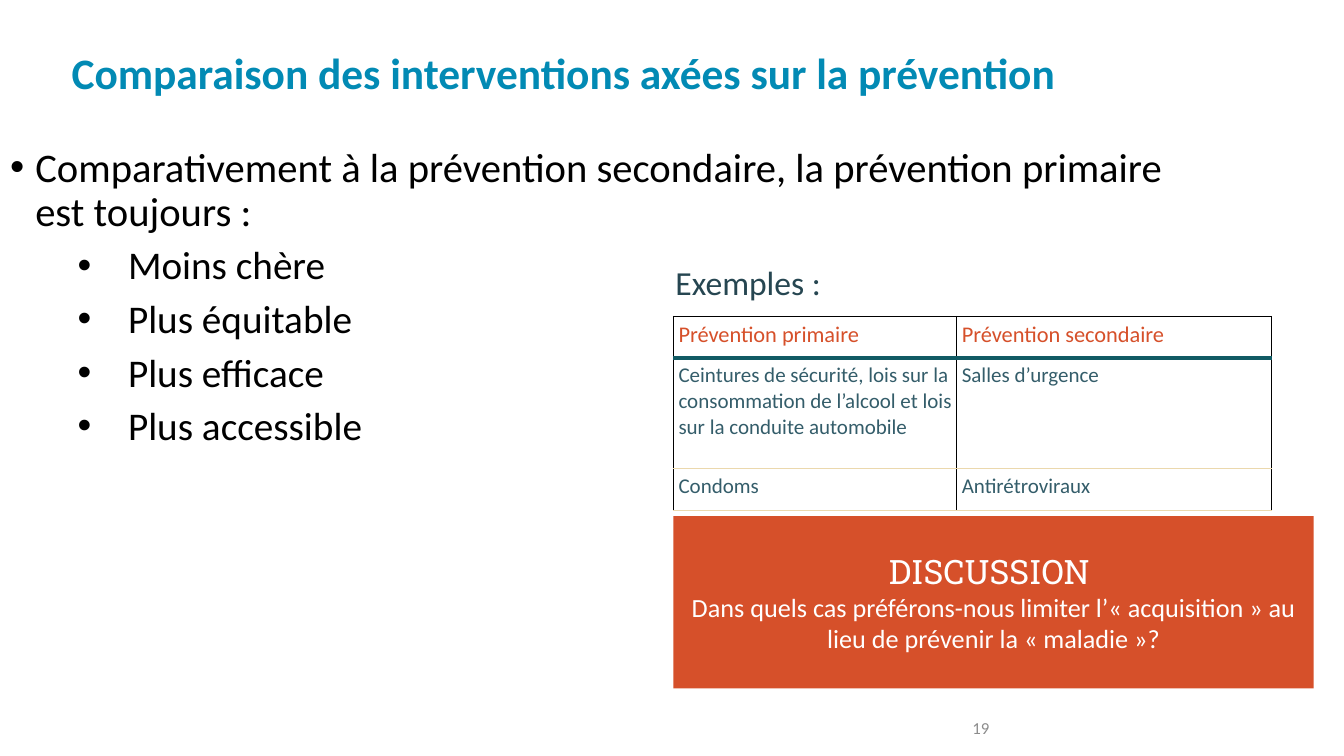
from lxml.etree import SubElement
from pptx import Presentation
from pptx.dml.color import RGBColor
from pptx.enum.shapes import MSO_SHAPE as Shape
from pptx.enum.text import MSO_ANCHOR as Anchor, MSO_AUTO_SIZE as AutoSize, PP_ALIGN as Align
from pptx.oxml.ns import qn
from pptx.util import Inches, Pt

ORANGE, TEAL, SAND, BLACK = "D6502A", "115B64", "EBD8AD", "000000"


def rgb(code):
    """Turn a hex string into a colour."""
    return RGBColor.from_string(code)


class Deck:
    """Style and current slide; boxes are in hundredths of its width and height."""

    font = "Calibri"

    def __init__(self):
        """Open a widescreen deck with one title-and-content slide."""
        self.show = Presentation()
        self.show.slide_width, self.show.slide_height = Inches(13.33), Inches(7.5)
        self.slide = self.show.slides.add_slide(self.show.slide_layouts[1])

    def across(self, columns):
        """Length of a number of grid columns."""
        return int(self.show.slide_width * columns / 100)

    def down(self, rows):
        """Length of a number of grid rows."""
        return int(self.show.slide_height * rows / 100)

    def box(self, left, top, width, height):
        """Position and size of a grid area."""
        return self.across(left), self.down(top), self.across(width), self.down(height)

    def style(self, paragraph, size, color, font=None, bold=False, align=Align.LEFT):
        """Format a paragraph and its runs."""
        paragraph.alignment = align
        for run in paragraph.runs:
            run.font.name, run.font.size, run.font.bold = font or self.font, Pt(size), bold
            run.font.color.rgb = rgb(color)

    def frame(self, holder, lines, inset_x=5, inset_y=5, anchor=Anchor.TOP):
        """Fill a shape's text frame with lines and return its paragraphs."""
        frame = holder.text_frame
        frame.text = "\n".join(lines)
        frame.word_wrap, frame.auto_size, frame.vertical_anchor = True, AutoSize.NONE, anchor
        frame.margin_left = frame.margin_right = Pt(inset_x)
        frame.margin_top = frame.margin_bottom = Pt(inset_y)
        return frame.paragraphs

    def place(self, holder, area):
        """Move a placeholder to a grid area."""
        holder.left, holder.top, holder.width, holder.height = self.box(*area)

    def title(self, text, area):
        """Write the slide title."""
        heading = self.slide.shapes.title
        self.place(heading, area)
        paragraph = self.frame(heading, [text], 0, 0)[0]
        paragraph.line_spacing = 0.9
        self.style(paragraph, 31, "028AB4", bold=True)

    def bullets(self, lead, points, area):
        """Write a lead bullet and the points below it."""
        body = self.slide.placeholders[1]
        self.place(body, area)
        for i, paragraph in enumerate(self.frame(body, [lead, *points], 7.2, 3.6)):
            level, size, margin, hang = (1, 28, 1.17, 0.5) if i else (0, 29, 0.25, 0.25)
            paragraph.level, paragraph.line_spacing = level, 0.9
            paragraph.space_before = Pt(8)
            self.style(paragraph, size, BLACK)
            props = paragraph._p.get_or_add_pPr()
            props.set("marL", str(Inches(margin)))
            props.set("indent", str(-Inches(hang)))
            SubElement(props, qn("a:buFont"), typeface="Arial")
            SubElement(props, qn("a:buChar"), char="•")

    def text(self, text, area, size, color, inset_x=5, **look):
        """Add a one-line text box."""
        label = self.slide.shapes.add_textbox(*self.box(*area))
        paragraph = self.frame(label, [text], inset_x, anchor=look.pop("anchor", Anchor.TOP))[0]
        self.style(paragraph, size, color, **look)

    def callout(self, heading, question, area):
        """Add a filled panel with a heading and a question."""
        panel = self.slide.shapes.add_shape(Shape.RECTANGLE, *self.box(*area))
        panel.shadow.inherit = False
        panel.fill.solid()
        panel.fill.fore_color.rgb = rgb(ORANGE)
        panel.line.fill.background()
        first, second = self.frame(panel, [heading, question], 10, anchor=Anchor.MIDDLE)
        self.style(first, 24, "FFFFFF", font="Roboto Slab", align=Align.CENTER)
        self.style(second, 18.7, "FFFFFF", align=Align.CENTER)

    def border(self, cell, side, color, width):
        """Draw one side of a cell."""
        line = SubElement(cell._tc.get_or_add_tcPr(), qn(f"a:ln{side}"), w=str(Pt(width)))
        SubElement(SubElement(line, qn("a:solidFill")), qn("a:srgbClr"), val=color)

    def table(self, rows, left, top, widths, heights):
        """Add a ruled table whose first row is the header."""
        area = self.box(left, top, sum(widths), sum(heights))
        grid = self.slide.shapes.add_table(len(rows), len(widths), *area).table
        grid.first_row = grid.horz_banding = False
        for column, width in zip(grid.columns, widths):
            column.width = self.across(width)
        rules = [(BLACK, 1), (TEAL, 3)] + [(SAND, 1)] * (len(rows) - 1)
        for r, (row, height) in enumerate(zip(rows, heights)):
            grid.rows[r].height = self.down(height)
            for c, words in enumerate(row):
                cell = grid.cell(r, c)
                cell.text = words
                cell.margin_left = cell.margin_right = Pt(3.6)
                cell.margin_top = cell.margin_bottom = Pt(3.6)
                size, color = (15, "345D6A") if r else (16, ORANGE)
                self.style(cell.text_frame.paragraphs[0], size, color)
                sides = zip("LRTB", [(BLACK, 1), (BLACK, 1), rules[r], rules[r + 1]])
                for side, rule in sides:
                    self.border(cell, side, *rule)
                cell.fill.background()


def main():
    """Build the slide and save it."""
    deck = Deck()
    deck.title("Comparaison des interventions axées sur la prévention", (5.33, 6.93, 91.97, 17.07))
    deck.text("19", (70.67, 92.67, 3.68, 7.2), 12, "8C8C8C", 7.2,
              align=Align.RIGHT, anchor=Anchor.MIDDLE)
    deck.bullets(
        "Comparativement à la prévention secondaire, la prévention primaire est toujours :",
        ["Moins chère", "Plus équitable", "Plus efficace", "Plus accessible"],
        (0, 18.8, 90.02, 66))
    deck.table(
        [("Prévention primaire", "Prévention secondaire"),
         ("Ceintures de sécurité, lois sur la consommation de l’alcool et "
          "lois sur la conduite automobile", "Salles d’urgence"),
         ("Condoms", "Antirétroviraux")],
        50.11, 41.87, (21.08, 23.41), (5.47, 14.67, 5.47))
    deck.callout(
        "DISCUSSION ",
        "Dans quels cas préférons-nous limiter l’« acquisition » au lieu de prévenir la « maladie »?",
        (50.11, 68.27, 47.64, 22.8))
    deck.text("Exemples :", (49.74, 33.73, 41.11, 7.2), 24, "264651")
    deck.show.save("out.pptx")


if __name__ == "__main__":
    main()
